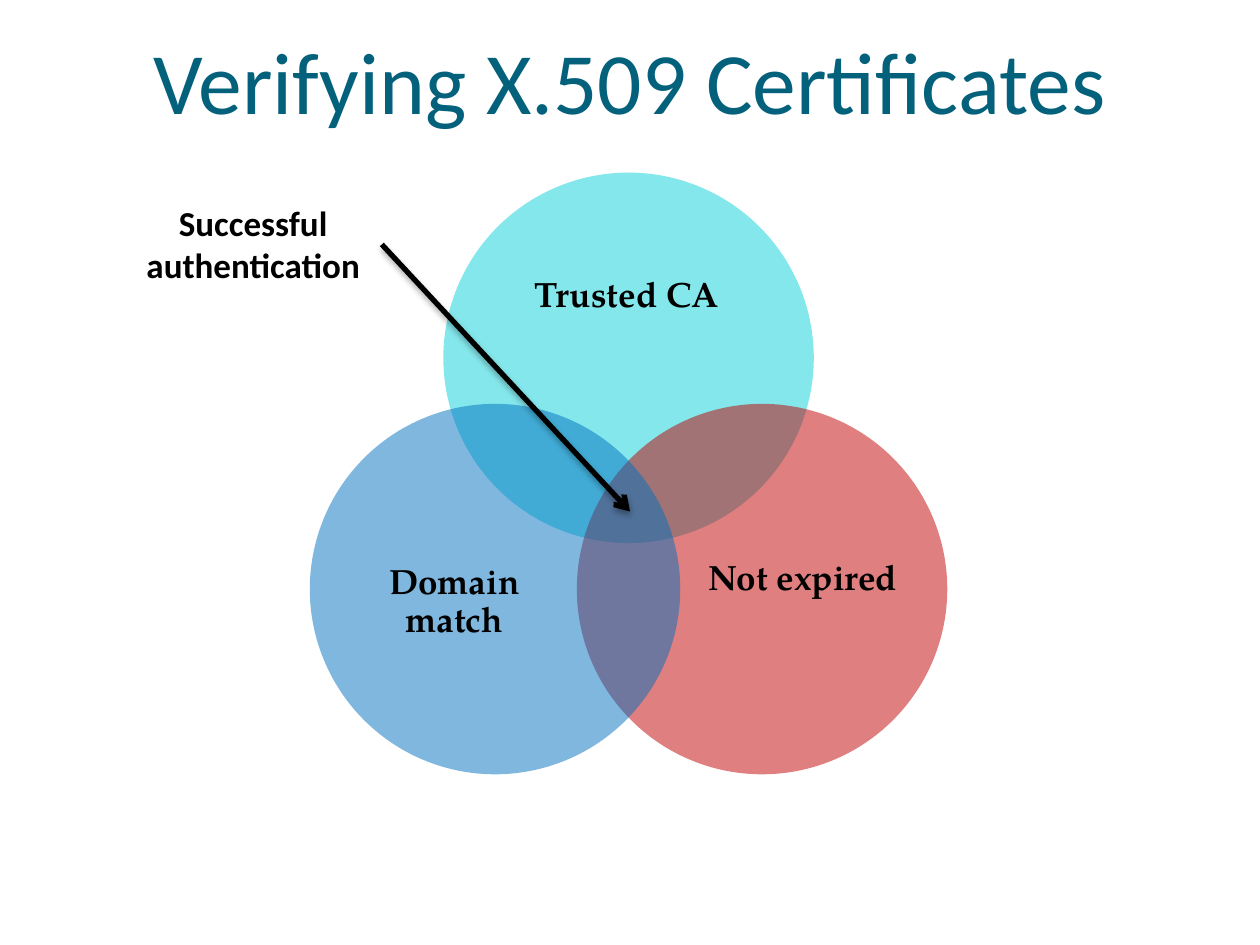
from dataclasses import dataclass
from math import cos, radians, sin

from lxml import etree
from pptx import Presentation
from pptx.dml.color import RGBColor
from pptx.enum import shapes, text
from pptx.oxml import ns
from pptx.util import Pt


@dataclass(frozen=True)
class Theme:
    title: str = "04617B"
    ink: str = "000000"
    trust: str = "0BD0D9"
    expiry: str = "C00000"
    domain: str = "0070C0"
    sans: str = "Calibri"
    serif: str = "TeX Gyre Pagella"
    head: int = 50
    label: int = 20


THEME = Theme()
MID = (359.2, 292.6)  # centre of the Venn diagram
REACH = 88.1  # from that centre to the centre of each circle
SIZE = 211.7  # diameter of a circle

# name, colour, angle, label box as shares of the diameter, lift of the label
SETS = [
    ("Trusted CA", THEME.trust, -90, (0.13, 0.17, 0.73, 0.45), 26),
    ("Not expired", THEME.expiry, 30, (0.31, 0.26, 0.6, 0.55), 26),
    ("Domain match", THEME.domain, 150, (0.09, 0.26, 0.6, 0.55), 0),
]


def apply(item, **values):
    for name, value in values.items():
        setattr(item, name, value)


def add_xml(parent, tag, **values):
    node = etree.SubElement(parent, ns.qn(tag))
    for name, value in values.items():
        node.set(name, str(value))
    return node


def write(frame, lines, font, size, color, bold=True, space=1.0, pads=None):
    """Fill a text frame with centred lines; pads are left, top, right, bottom."""
    apply(frame, word_wrap=True, auto_size=text.MSO_AUTO_SIZE.NONE)
    if pads:
        sides = ("left", "top", "right", "bottom")
        apply(frame, **{f"margin_{s}": Pt(p) for s, p in zip(sides, pads)})
    frame.text = "\n".join(lines)
    for para in frame.paragraphs:
        apply(para, alignment=text.PP_ALIGN.CENTER, line_spacing=space)
        for run in para.runs:
            apply(run.font, name=font, size=Pt(size), bold=bold)
            run.font.color.rgb = RGBColor.from_string(color)


def add_title(slide, words):
    title = slide.shapes.title
    apply(title, left=Pt(36), top=Pt(9.4), width=Pt(648), height=Pt(90))
    write(title.text_frame, [words], THEME.sans, THEME.head, THEME.title,
          bold=False, pads=(0, 6, 0, 0))
    title.text_frame.vertical_anchor = text.MSO_ANCHOR.TOP


def add_set(slide, name, color, angle, box, lift):
    """Draw one half-transparent circle of the diagram and its label."""
    turn = radians(angle)
    left = MID[0] + REACH * cos(turn) - SIZE / 2
    top = MID[1] + REACH * sin(turn) - SIZE / 2
    disc = slide.shapes.add_shape(
        shapes.MSO_SHAPE.OVAL, Pt(left), Pt(top), Pt(SIZE), Pt(SIZE))
    disc.shadow.inherit = False
    disc.line.fill.background()
    disc.fill.solid()
    disc.fill.fore_color.rgb = RGBColor.from_string(color)
    tint = disc.fill._xPr.find(".//" + ns.qn("a:srgbClr"))
    add_xml(tint, "a:alpha", val=50000)

    dx, dy, width, height = (SIZE * share for share in box)
    label = slide.shapes.add_textbox(
        Pt(left + dx), Pt(top + dy), Pt(width), Pt(height))
    write(label.text_frame, [name], THEME.serif, THEME.label, THEME.ink,
          space=0.9, pads=(0, 0, 0, lift))
    label.text_frame.vertical_anchor = text.MSO_ANCHOR.MIDDLE


def add_arrow(slide, start, end):
    """Draw a thick arrow with a soft shadow below it."""
    arrow = slide.shapes.add_connector(
        shapes.MSO_CONNECTOR.STRAIGHT, *map(Pt, start + end))
    arrow.line.width = Pt(3)
    arrow.line.color.rgb = RGBColor.from_string(THEME.ink)
    add_xml(arrow.line._get_or_add_ln(), "a:tailEnd", type="arrow")
    effects = add_xml(arrow._element.spPr, "a:effectLst")
    shade = add_xml(effects, "a:outerShdw", blurRad=Pt(3.5), dist=Pt(2.2),
                    dir=90 * 60000, rotWithShape=0)
    tint = add_xml(shade, "a:srgbClr", val=THEME.ink)
    add_xml(tint, "a:alpha", val=32000)


def add_note(slide, lines):
    note = slide.shapes.add_textbox(Pt(65.5), Pt(111.6), Pt(158.4), Pt(55.4))
    write(note.text_frame, lines, THEME.sans, THEME.label, THEME.ink)


def main():
    deck = Presentation()
    apply(deck, slide_width=Pt(720), slide_height=Pt(540))
    slide = deck.slides.add_slide(deck.slide_layouts.get_by_name("Title Only"))
    add_title(slide, "Verifying X.509 Certificates")
    for item in SETS:
        add_set(slide, *item)
    add_arrow(slide, (218.2, 139.7), (360, 292.3))
    add_note(slide, ["Successful", "authentication"])
    deck.save("out.pptx")


if __name__ == "__main__":
    main()
